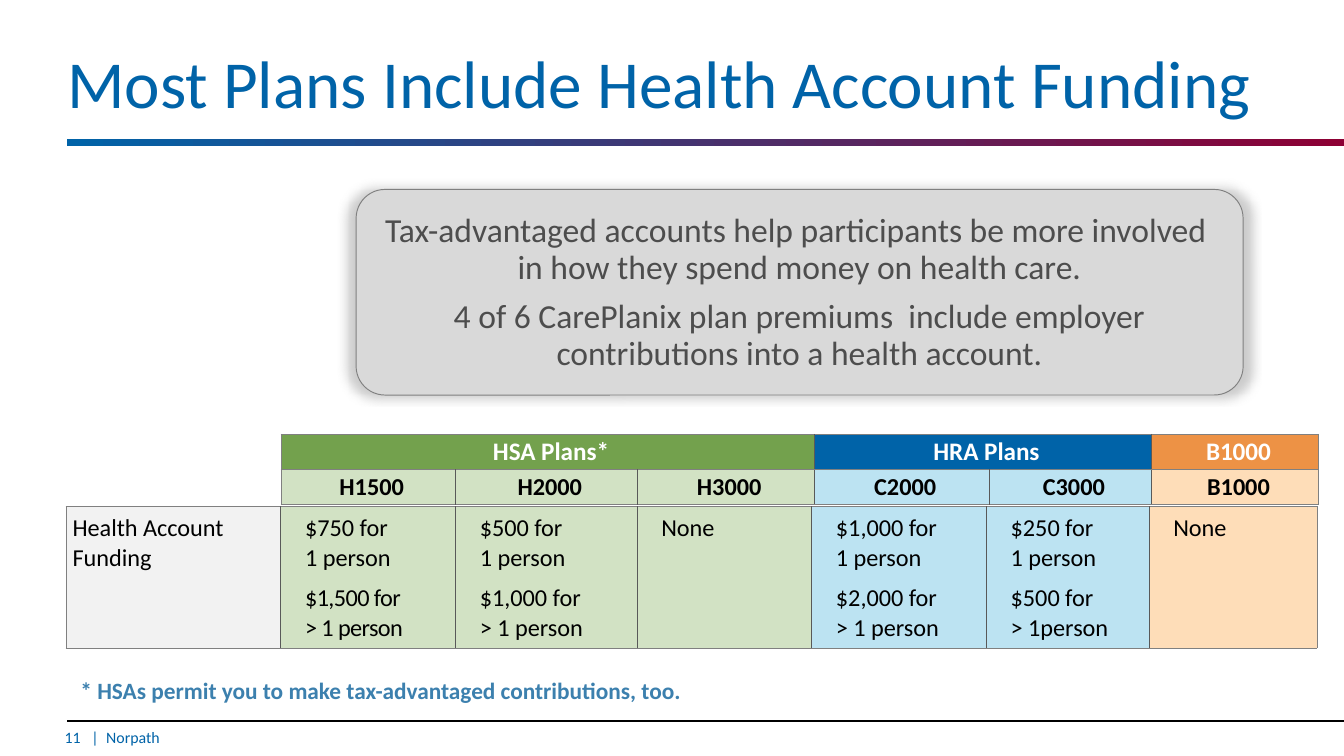
from dataclasses import dataclass

from lxml.etree import SubElement
from pptx import Presentation
from pptx.dml.color import RGBColor
from pptx.enum.shapes import MSO_CONNECTOR as Connector, MSO_SHAPE as Shape
from pptx.enum.text import MSO_ANCHOR as Anchor, MSO_AUTO_SIZE as AutoSize, PP_ALIGN as Align
from pptx.oxml.ns import qn
from pptx.util import Inches, Pt


@dataclass(frozen=True)
class Theme:
    font: str = "Calibri"
    blue: str = "0063A8"
    wine: str = "8D0034"
    green: str = "73A14D"
    orange: str = "ED9245"
    pale_green: str = "D2E2C4"
    pale_blue: str = "BCE3F2"
    pale_orange: str = "FEDDB8"
    pale_gray: str = "F2F2F2"
    panel: str = "D9D9D9"
    edge: str = "808080"
    rule: str = "595959"
    callout_text: str = "4D4D4D"
    note_text: str = "3C80AE"
    black: str = "000000"
    white: str = "FFFFFF"
    title_size: float = 36
    callout_size: float = 18
    group_size: float = 13.5
    cell_size: float = 13
    note_size: float = 12.5
    footer_size: float = 8.5


T = Theme()
COLS, ROWS = 100, 56.25  # slide grid of 0.1 inch squares
MARGIN = 5
LABEL_COLS = 16
HEADER_COLS = [13, 13.5, 13.2, 13, 12.1, 12.4]
FUNDING_COLS = [LABEL_COLS, 13, 13.5, 13, 13, 12.1, 12.5]
TABLE_LEFT = 4.9

GROUPS = [("HSA Plans*", 3, T.green, T.pale_green),
          ("HRA Plans", 2, T.blue, T.pale_blue),
          ("B1000", 1, T.orange, T.pale_orange)]
PLANS = ["H1500", "H2000", "H3000", "C2000", "C3000", "B1000"]
FUNDING = [["$750 for \n1 person", "$1,500 for \n> 1 person"],
           ["$500 for\n1 person", "$1,000 for\n> 1 person"],
           ["None"],
           ["$1,000 for \n1 person", "$2,000 for \n> 1 person"],
           ["$250 for\n1 person", "$500 for \n> 1person"],
           ["None"]]
CALLOUT = ["Tax-advantaged accounts help participants be more involved \n"
           "in how they spend money on health care.",
           "4 of 6 CarePlanix plan premiums  include employer "
           "contributions into a health account."]


def grid(*counts):
    """Turn counts of grid squares into slide lengths."""
    return [Inches(n / 10) for n in counts]


def rgb(color):
    return RGBColor.from_string(color)


def write(tf, paragraphs, size, color, bold=False, align=Align.LEFT, after=0):
    for i, text in enumerate(paragraphs):
        p = tf.add_paragraph() if i else tf.paragraphs[0]
        p.text = text
        p.alignment = align
        p.space_after = Pt(after)
        p.font.name, p.font.size, p.font.bold = T.font, Pt(size), bold
        p.font.color.rgb = rgb(color)


def add_title(s, text):
    title = s.shapes.title
    title.left, title.top, title.width, title.height = grid(MARGIN, 2.6, 90, 7)
    tf = title.text_frame
    tf.auto_size, tf.vertical_anchor = AutoSize.NONE, Anchor.MIDDLE
    tf.margin_left = 0
    write(tf, [text], T.title_size, T.blue)


def add_title_bar(s):
    bar = s.shapes.add_shape(Shape.RECTANGLE, *grid(MARGIN, 10.35, COLS - MARGIN, 0.5))
    bar.shadow.inherit = False
    bar.line.fill.background()
    bar.fill.gradient()
    bar.fill.gradient_angle = 0
    for stop, color in zip(bar.fill.gradient_stops, (T.blue, T.wine)):
        stop.color.rgb = rgb(color)


def add_callout(s):
    sp = s.shapes.add_shape(Shape.ROUNDED_RECTANGLE, *grid(26.5, 14.1, 66, 15.3))
    sp.adjustments[0] = 0.14
    sp.fill.solid()
    sp.fill.fore_color.rgb = rgb(T.panel)
    sp.line.color.rgb = rgb(T.edge)
    sp.line.width = Pt(0.5)
    add_glow_shadow(sp)
    tf = sp.text_frame
    tf.word_wrap, tf.vertical_anchor = True, Anchor.MIDDLE
    tf.margin_left = tf.margin_right = tf.margin_top = tf.margin_bottom = Inches(0.1)
    write(tf, CALLOUT, T.callout_size, T.callout_text, align=Align.CENTER, after=6)
    for p in tf.paragraphs:
        p.line_spacing = Pt(20)


def add_glow_shadow(sp):
    """Put a soft, centred and slightly enlarged shadow around the shape."""
    sp.shadow.inherit = False
    effects = sp.element.spPr.find(qn("a:effectLst"))
    shadow = SubElement(effects, qn("a:outerShdw"), blurRad=str(Pt(5)), dist="0", dir="0",
                        sx="102000", sy="102000", algn="ctr", rotWithShape="0")
    color = SubElement(shadow, qn("a:srgbClr"), val=T.edge)
    SubElement(color, qn("a:alpha"), val="40000")


def add_table(s, left, top, columns, rows):
    """Add an unstyled table; columns and rows are sizes in grid squares."""
    frame = s.shapes.add_table(len(rows), len(columns),
                               *grid(left, top, sum(columns), sum(rows)))
    table = frame.table
    table.first_row = table.horz_banding = False
    for column, width in zip(table.columns, grid(*columns)):
        column.width = width
    for row, height in zip(table.rows, grid(*rows)):
        row.height = height
    return table


def style_cell(cell, fill, pad, first, last):
    cell.fill.solid()
    cell.fill.fore_color.rgb = rgb(fill)
    cell.margin_left, cell.margin_right = Inches(0.05), 0
    cell.margin_top = cell.margin_bottom = Inches(pad)
    outer, inner = (T.edge, 0.25), (T.rule, 0.5)
    sides = {"L": outer if first else inner, "R": outer if last else inner,
             "T": outer, "B": outer}
    tc_pr = cell._tc.get_or_add_tcPr()
    for i, (side, (color, width)) in enumerate(sides.items()):
        ln = SubElement(tc_pr, qn("a:ln" + side), w=str(Pt(width)))
        SubElement(SubElement(ln, qn("a:solidFill")), qn("a:srgbClr"), val=color)
        tc_pr.insert(i, ln)


def add_plan_header(s):
    table = add_table(s, TABLE_LEFT + LABEL_COLS, 32.3, HEADER_COLS, [2.6, 2.6])
    last = len(PLANS) - 1
    col = 0
    for name, span, dark, pale in GROUPS:
        for c in range(col, col + span):
            style_cell(table.cell(0, c), dark, 0.02, c == 0, c == last)
            style_cell(table.cell(1, c), pale, 0.02, c == 0, c == last)
            write(table.cell(1, c).text_frame, [PLANS[c]], T.cell_size, T.black,
                  bold=True, align=Align.CENTER)
        if span > 1:
            table.cell(0, col).merge(table.cell(0, col + span - 1))
        write(table.cell(0, col).text_frame, [name], T.group_size, T.white,
              bold=True, align=Align.CENTER)
        col += span


def add_funding_row(s):
    table = add_table(s, TABLE_LEFT, 37.7, FUNDING_COLS, [10.5])
    fills = [T.pale_gray] + [pale for _, span, _, pale in GROUPS for _ in range(span)]
    entries = [["Health Account\nFunding"]] + FUNDING
    for c, (fill, entry) in enumerate(zip(fills, entries)):
        cell = table.cell(0, c)
        style_cell(cell, fill, 0.05, c == 0, c == len(entries) - 1)
        write(cell.text_frame, entry, T.cell_size, T.black, after=6)
        if c:
            for p in cell.text_frame.paragraphs:
                p._p.get_or_add_pPr().set("marL", str(Inches(0.13)))
    for r in table.cell(0, 1).text_frame.paragraphs[1].runs:
        r._r.get_or_add_rPr().set("spc", "-30")


def add_text(s, box, text, size, color, bold=False):
    tf = s.shapes.add_textbox(*grid(*box)).text_frame
    tf.word_wrap = True
    write(tf, [text], size, color, bold)
    return tf


def add_footer(s):
    y = 53.62
    line = s.shapes.add_connector(Connector.STRAIGHT, *grid(MARGIN, y, COLS, y))
    line.line.color.rgb = rgb(T.black)
    line.line.width = Pt(1)
    SubElement(line.element.spPr, qn("a:effectLst"))
    tf = add_text(s, (4.8, y, 25.8, 2.4), "11\t|\tNorpath", T.footer_size, T.blue)
    tf.margin_left = tf.margin_right = 0
    tabs = SubElement(tf.paragraphs[0]._p.get_or_add_pPr(), qn("a:tabLst"))
    for stop in (0.2, 0.31):
        SubElement(tabs, qn("a:tab"), pos=str(Inches(stop)), algn="l")


def main():
    prs = Presentation()
    prs.slide_width, prs.slide_height = grid(COLS, ROWS)
    s = prs.slides.add_slide(prs.slide_layouts[5])
    add_title_bar(s)
    add_footer(s)
    add_title(s, "Most Plans Include Health Account Funding")
    add_callout(s)
    add_text(s, (MARGIN, 49.8, 83.1, 3.1),
             "* HSAs permit you to make tax-advantaged contributions, too.",
             T.note_size, T.note_text, bold=True)
    add_funding_row(s)
    add_plan_header(s)
    prs.save("out.pptx")


if __name__ == "__main__":
    main()
